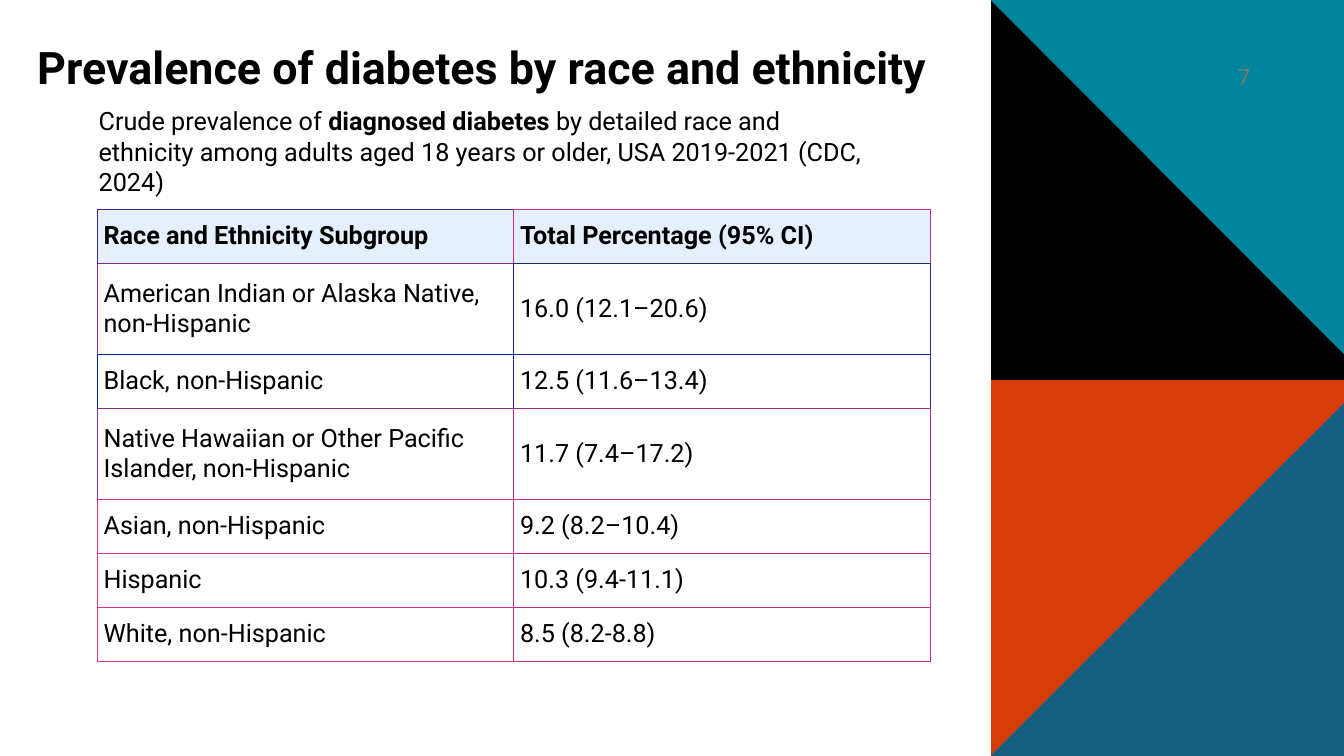
from lxml.etree import SubElement as Sub
from pptx import Presentation
from pptx.dml.color import RGBColor as RGB
from pptx.enum.text import MSO_ANCHOR as Anchor, PP_ALIGN as Align
from pptx.oxml.ns import qn
from pptx.util import Pt

FONT = "Roboto"
BLACK = RGB(0, 0, 0)
WHITE = RGB(255, 255, 255)
GREY = RGB(0x79, 0x79, 0x79)
PALE = RGB(0xE6, 0xEF, 0xFC)
TEAL = RGB(0x00, 0x85, 0x9B)
RED = RGB(0xD7, 0x3D, 0x09)
BLUE = RGB(0x15, 0x60, 0x82)
PINK = RGB(0xE0, 0x2D, 0x8E)
ROSE = RGB(0xC0, 0x2D, 0x8E)
LINES = [
    (RGB(0x40, 0x22, 0x8E), RGB(0xC0, 0x2C, 0x8E)),
    (RGB(0x80, 0x2C, 0x8E), RGB(0x20, 0x2F, 0x8E)),
    (RGB(0x00, 0x30, 0x8E), RGB(0x20, 0x2A, 0x8E)),
    (RGB(0x80, 0x30, 0x8E), RGB(0xA0, 0x29, 0x8E)),
] + [(PINK, ROSE)] * 3
ROWS = [
    ("Race and Ethnicity Subgroup", "Total Percentage (95% CI)"),
    ("American Indian or Alaska Native, non-Hispanic", "16.0 (12.1–20.6)"),
    ("Black, non-Hispanic", "12.5 (11.6–13.4)"),
    ("Native Hawaiian or Other Pacific Islander, non-Hispanic", "11.7 (7.4–17.2)"),
    ("Asian, non-Hispanic", "9.2 (8.2–10.4)"),
    ("Hispanic", "10.3 (9.4-11.1)"),
    ("White, non-Hispanic", "8.5 (8.2-8.8)"),
]
TALL = (1, 3)


def write(frame, *parts, size=18, color=BLACK, bold=False, align=Align.LEFT, anchor=Anchor.TOP):
    """Fill a text frame with runs; a (text, bold) pair sets its own weight."""
    frame.word_wrap = True
    frame.vertical_anchor = anchor
    para = frame.paragraphs[0]
    para.alignment = align
    for part in parts:
        text, heavy = part if isinstance(part, tuple) else (part, bold)
        run = para.add_run()
        run.text = text
        font = run.font
        font.name, font.size, font.bold = FONT, Pt(size), heavy
        font.color.rgb = color


def label(slide, box, *parts, **style):
    """Place a text box at left, top, width, height in points."""
    write(slide.shapes.add_textbox(*map(Pt, box)).text_frame, *parts, **style)


def poly(slide, points, color):
    """Draw a filled outline without a line."""
    ends = [(Pt(x), Pt(y)) for x, y in points]
    build = slide.shapes.build_freeform(*ends[0], scale=1.0)
    build.add_line_segments(ends[1:], close=True)
    shape = build.convert_to_shape()
    shape.shadow.inherit = False
    shape.fill.solid()
    shape.fill.fore_color.rgb = color
    shape.line.fill.background()


def panel(slide, left, top, width, height):
    """Draw the side panel of two blocks, each cut by a diagonal."""
    right, low = left + width, top + height
    mid = top + height / 2
    poly(slide, [(left, mid), (right, mid), (right, low), (left, low)], RED)
    poly(slide, [(right, mid + 18), (right, low), (left, low), (left, low - 0.6)], BLUE)
    poly(slide, [(left, top), (right, top), (right, mid + 1), (left, mid + 1)], TEAL)
    poly(slide, [(left, top + 0.6), (right, mid - 16.8), (right, mid + 1.3), (left, mid + 1.3)], BLACK)


def edge(cell, sides):
    """Set the cell borders from a map of side to colour."""
    props = cell._tc.get_or_add_tcPr()
    for spot, (side, color) in enumerate(sides.items()):
        line = Sub(props, qn("a:ln" + side), w=str(Pt(0.75)))
        Sub(Sub(line, qn("a:solidFill")), qn("a:srgbClr"), val=str(color))
        props.insert(spot, line)


def grid(slide, left, top, width, short, tall):
    """Build the table; neighbouring cells share the colour of their border."""
    last = len(ROWS) - 1
    highs = [tall if row in TALL else short for row in range(len(ROWS))]
    box = map(Pt, (left, top, width, sum(highs)))
    table = slide.shapes.add_table(len(ROWS), 2, *box).table
    table.horz_banding = False
    for col in table.columns:
        col.width = Pt(width / 2)
    for row, texts in enumerate(ROWS):
        table.rows[row].height = Pt(highs[row])
        for col, text in enumerate(texts):
            cell = table.cell(row, col)
            cell.margin_left = cell.margin_right = Pt(4.5)
            cell.margin_top = cell.margin_bottom = Pt(4.5)
            write(cell.text_frame, text, bold=row == 0)
            cell.vertical_anchor = Anchor.MIDDLE
            cell.fill.solid()
            cell.fill.fore_color.rgb = WHITE if row else PALE
            own, below = LINES[row][col], LINES[min(row + 1, last)][col]
            edge(cell, {"L": own, "R": LINES[row][1], "T": own, "B": below})


def main():
    """Build the slide and save it."""
    deck = Presentation()
    deck.slide_width, deck.slide_height = Pt(960), Pt(540)
    slide = deck.slides.add_slide(deck.slide_layouts[6])
    panel(slide, 708, 0, 252, 540)
    label(slide, (822, 36, 78, 37.5), "7", size=16, color=GREY,
          align=Align.RIGHT, anchor=Anchor.MIDDLE)
    label(slide, (19.5, 24.5, 672.5, 46), "Prevalence of diabetes by race and ethnicity",
          size=32, bold=True)
    grid(slide, 69.5, 149.5, 595, 38.6, 65)
    label(slide, (63.4, 72, 566.6, 51), "Crude prevalence of ", ("diagnosed diabetes", True),
          " by detailed race and ethnicity among adults aged 18 years or older, "
          "USA 2019-2021 (CDC, 2024)")
    deck.save("out.pptx")


if __name__ == "__main__":
    main()
